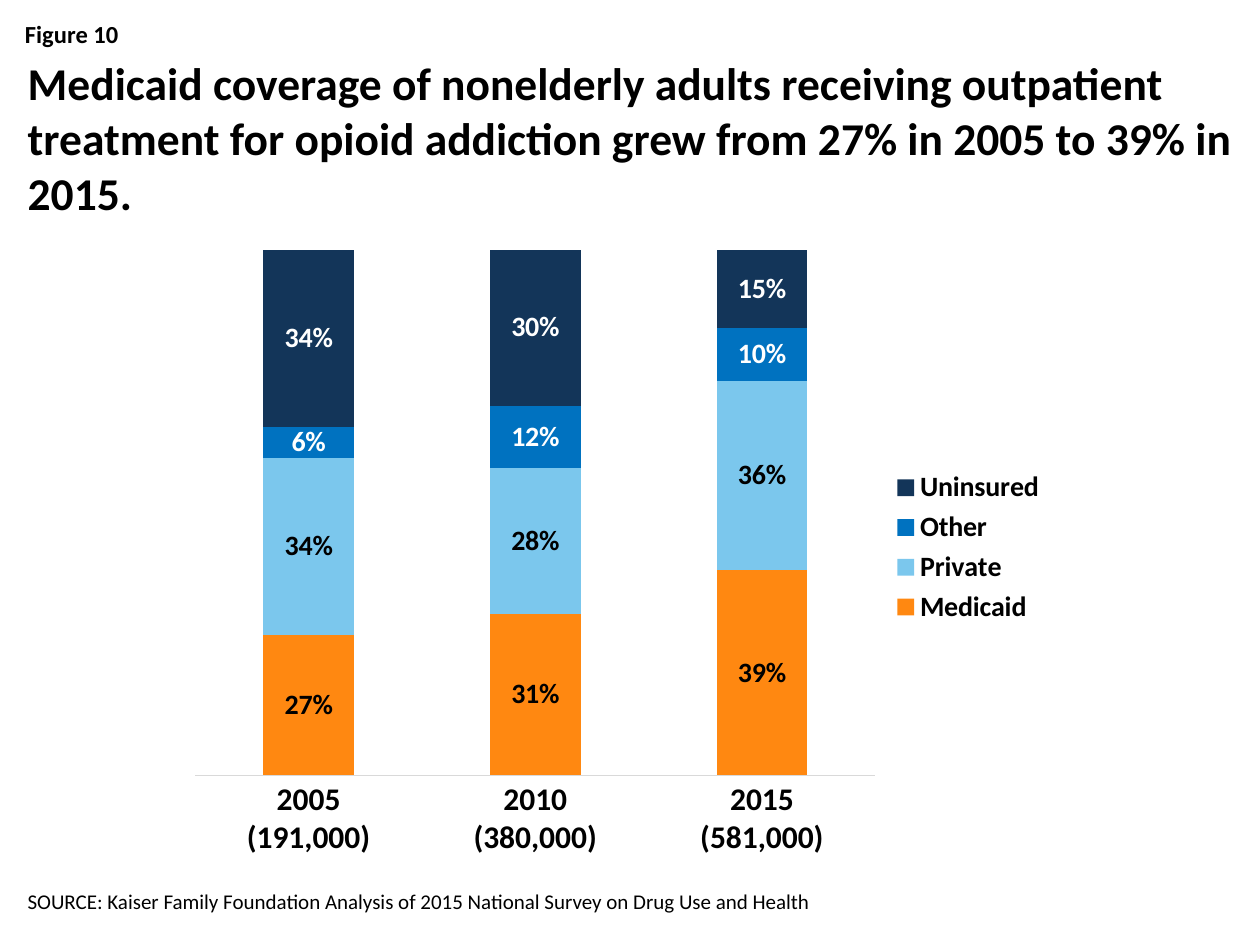
"""Build the slide on Medicaid coverage of opioid addiction treatment."""
from dataclasses import dataclass
from typing import Any

from lxml.etree import SubElement
from pptx import Presentation
from pptx.chart.data import CategoryChartData
from pptx.dml.color import RGBColor
from pptx.enum.chart import XL_CHART_TYPE as ChartType
from pptx.enum.chart import XL_LEGEND_POSITION as LegendPos
from pptx.enum.chart import XL_TICK_MARK as Tick
from pptx.enum.text import MSO_ANCHOR as Anchor
from pptx.enum.text import MSO_AUTO_SIZE as AutoSize
from pptx.enum.text import PP_ALIGN as Align
from pptx.oxml.ns import qn
from pptx.util import Inches, Pt

COLORS = {
    "black": "000000",
    "white": "FFFFFF",
    "axis": "D9D9D9",
    "orange": "FF8811",
    "sky": "7BC7ED",
    "blue": "0072C0",
    "navy": "133559",
}
YEARS = ["2005\n(191,000)", "2010\n(380,000)", "2015\n(581,000)"]
COVERAGE = [
    ("Medicaid", (0.27, 0.31, 0.39), "orange", "black"),
    ("Private", (0.34, 0.28, 0.36), "sky", "black"),
    ("Other", (0.06, 0.12, 0.10), "blue", "white"),
    ("Uninsured", (0.34, 0.30, 0.15), "navy", "white"),
]


def rgb(name):
    return RGBColor.from_string(COLORS[name])


def set_layout(parent, index, inner=False, **fractions):
    """Place a chart part by fractions of the chart's size."""
    layout = parent.find(qn("c:layout"))
    if layout is None:
        layout = SubElement(parent, qn("c:layout"))
        parent.insert(index, layout)
    for child in list(layout):
        layout.remove(child)
    manual = SubElement(layout, qn("c:manualLayout"))
    if inner:
        SubElement(manual, qn("c:layoutTarget")).set("val", "inner")
    for axis in "xy":
        SubElement(manual, qn(f"c:{axis}Mode")).set("val", "edge")
    for key in "xywh":
        SubElement(manual, qn(f"c:{key}")).set("val", str(fractions[key]))


@dataclass
class SlideBuilder:
    """Hold the style and the current slide."""
    slide: Any
    font: str = "Calibri"

    def style(self, font, size, color="black", bold=True):
        font.name, font.size, font.bold = self.font, Pt(size), bold
        font.color.rgb = rgb(color)

    def fill_text(self, sp, text, size, bold=True, anchor=Anchor.TOP):
        tf = sp.text_frame
        tf.word_wrap = True
        tf.auto_size = AutoSize.NONE
        tf.vertical_anchor = anchor
        p = tf.paragraphs[0]
        p.alignment = Align.LEFT
        p.line_spacing = 1.0
        p.space_before = Pt(0)
        r = p.add_run()
        r.text = text
        self.style(r.font, size, bold=bold)

    def title(self, text, box, size):
        sp = self.slide.shapes.title
        sp.left, sp.top, sp.width, sp.height = map(Inches, box)
        self.fill_text(sp, text, size)

    def text(self, text, box, size, **options):
        sp = self.slide.shapes.add_textbox(*map(Inches, box))
        self.fill_text(sp, text, size, **options)

    def stacked_chart(self, categories, rows, box):
        data = CategoryChartData(number_format="0%")
        data.categories = categories
        for name, values, *_ in rows:
            data.add_series(name, values)
        chart = self.slide.shapes.add_chart(
            ChartType.COLUMN_STACKED_100, *map(Inches, box), data).chart
        chart.has_title = False
        self.style(chart.font, 10, bold=False)

        plot = chart.plots[0]
        plot.gap_width, plot.overlap = 150, 100
        plot.vary_by_categories = False
        for series, (_, _, fill, label) in zip(plot.series, rows):
            series.format.fill.solid()
            series.format.fill.fore_color.rgb = rgb(fill)
            labels = series.data_labels
            labels.show_value = True
            labels.number_format = "0%"
            labels.number_format_is_linked = False
            self.style(labels.font, 16, label)

        axis = chart.category_axis
        axis.major_tick_mark = axis.minor_tick_mark = Tick.NONE
        axis.format.line.color.rgb = rgb("axis")
        axis.format.line.width = Pt(0.75)
        self.style(axis.tick_labels.font, 18)
        chart.value_axis.visible = False
        chart.value_axis.has_major_gridlines = False

        chart.has_legend = True
        legend = chart.legend
        legend.position = LegendPos.RIGHT
        legend.include_in_layout = False
        self.style(legend.font, 16)
        chart_xml = legend._element.getparent()
        set_layout(chart_xml.find(qn("c:plotArea")), 0, inner=True,
                   x=0.02, y=0.02, w=0.77, h=0.83)
        set_layout(legend._element, 1, x=0.8, y=0.36, w=0.19, h=0.26)


def main():
    prs = Presentation()
    prs.slide_width, prs.slide_height = Inches(10), Inches(7.5)
    s = SlideBuilder(prs.slides.add_slide(prs.slide_layouts[5]))
    s.text("Figure 10", (0.1, 0.1, 9.8, 0.34), 14)
    s.title("Medicaid coverage of nonelderly adults receiving outpatient "
            "treatment for opioid addiction grew from 27% in 2005 to 39% "
            "in 2015.", (0.12, 0.39, 9.8, 1), 26)
    s.stacked_chart(YEARS, COVERAGE, (1.41, 1.88, 7.01, 5.03))
    s.text("SOURCE: Kaiser Family Foundation Analysis of 2015 National "
           "Survey on Drug Use and Health", (0.12, 6.53, 8.98, 0.77), 12,
           bold=False, anchor=Anchor.BOTTOM)
    prs.save("out.pptx")


if __name__ == "__main__":
    main()
